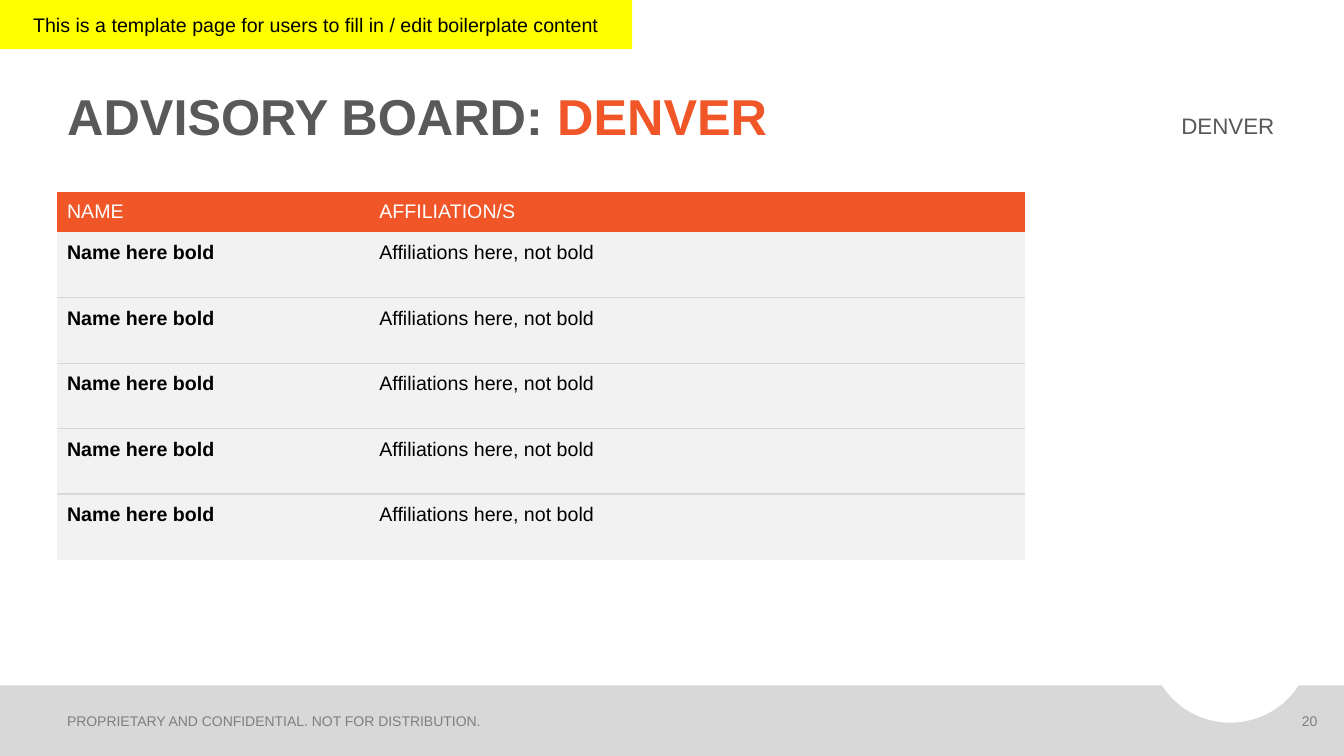
"""Build the Denver advisory board slide with its table of names and affiliations."""
from lxml import etree
from pptx import Presentation
from pptx.dml.color import RGBColor
from pptx.enum.shapes import MSO_SHAPE
from pptx.enum.text import MSO_ANCHOR, MSO_AUTO_SIZE, PP_ALIGN
from pptx.oxml import parse_xml
from pptx.oxml.ns import nsdecls, qn
from pptx.util import Cm, Pt

LEFT, CENTER, RIGHT = PP_ALIGN.LEFT, PP_ALIGN.CENTER, PP_ALIGN.RIGHT
TOP, MIDDLE, BOTTOM = MSO_ANCHOR.TOP, MSO_ANCHOR.MIDDLE, MSO_ANCHOR.BOTTOM
RECTANGLE, OVAL = MSO_SHAPE.RECTANGLE, MSO_SHAPE.OVAL
NO_AUTO_SIZE = MSO_AUTO_SIZE.NONE

COLORS = {
    "orange": "F15628", "dark": "595959", "gray": "7F7F7F", "band": "D8D8D8",
    "cell": "F2F2F2", "yellow": "FFFF00", "white": "FFFFFF", "black": "000000",
}
TITLE = [("ADVISORY BOARD: ", "dark"), ("DENVER", "orange")]
TITLE_BOX = (1.44, 0.76, 30.99, 3.05)
HEADER = ("NAME", "AFFILIATION/S")
MEMBERS = [("Name here bold", "Affiliations here, not bold")] * 5
BANNER = "This is a template page for users to fill in / edit boilerplate content"
BANNER_BOX = (0, 0, 15.93, 1.24)
LABELS = [
    ("PROPRIETARY AND CONFIDENTIAL. NOT FOR DISTRIBUTION.",
     (1.44, 17.8, 22.86, 0.71), LEFT, MIDDLE, {"size": Pt(10)}, "gray"),
    ("20", (32.03, 17.8, 1.42, 0.71), RIGHT, MIDDLE, {"size": Pt(10)}, "gray"),
    ("DENVER", (28.62, 2.7, 4.65, 0.81), CENTER, TOP, {"size": Pt(16)}, "dark"),
]
FOOTER_SHAPES = [
    (RECTANGLE, (0, 17.27, 33.87, 1.78), "band"),
    (OVAL, (28.96, 14.12, 4.09, 4.09), "white"),
]
TABLE_LEFT, TABLE_TOP = 1.44, 4.83
COLUMN_WIDTHS = (7.87, 16.51)
HEADER_HEIGHT, MEMBER_HEIGHT = 1.02, 1.65
PLAIN_TABLE_STYLE = "{2D5ABB26-0587-4C30-8999-92F81FD0307C}"


def set_values(target, values):
    for name, value in values.items():
        setattr(target, name, value)


def color(name):
    return RGBColor.from_string(COLORS[name])


def paint(fill, name):
    fill.solid()
    fill.fore_color.rgb = color(name)


def add_run(paragraph, text, color_name, values):
    run = paragraph.add_run()
    run.text = text
    set_values(run.font, {"name": "Arial", "bold": False, **values})
    run.font.color.rgb = color(color_name)


def add_shape(slide, kind, box, color_name):
    shape = slide.shapes.add_shape(kind, *map(Cm, box))
    shape.shadow.inherit = False
    paint(shape.fill, color_name)
    shape.line.fill.background()
    return shape


def add_title(slide):
    title = slide.shapes.title
    set_values(title, dict(zip(("left", "top", "width", "height"), map(Cm, TITLE_BOX))))
    set_values(title.text_frame, {"vertical_anchor": BOTTOM, "word_wrap": True,
                                  "auto_size": NO_AUTO_SIZE})
    paragraph = title.text_frame.paragraphs[0]
    set_values(paragraph, {"alignment": LEFT, "line_spacing": 0.9})
    for text, color_name in TITLE:
        add_run(paragraph, text, color_name, {"size": Pt(36), "bold": True})


def add_label(slide, text, box, alignment, anchor, values, color_name):
    frame = slide.shapes.add_textbox(*map(Cm, box)).text_frame
    set_values(frame, {"word_wrap": True, "vertical_anchor": anchor})
    frame.paragraphs[0].alignment = alignment
    add_run(frame.paragraphs[0], text, color_name, values)


def add_bottom_border(cell):
    border = parse_xml(f'<a:lnB {nsdecls("a")} w="12700"/>')
    fill = etree.SubElement(border, qn("a:solidFill"))
    etree.SubElement(fill, qn("a:srgbClr"), val=COLORS["band"])
    cell._tc.get_or_add_tcPr().insert(0, border)


def add_board_table(slide):
    rows = [HEADER, *MEMBERS]
    heights = [HEADER_HEIGHT] + [MEMBER_HEIGHT] * len(MEMBERS)
    box = (TABLE_LEFT, TABLE_TOP, sum(COLUMN_WIDTHS), sum(heights))
    frame = slide.shapes.add_table(len(rows), len(HEADER), *map(Cm, box))
    table = frame.table
    set_values(table, {"first_row": False, "horz_banding": False})
    table._tbl.tblPr.find(qn("a:tableStyleId")).text = PLAIN_TABLE_STYLE
    for column, width in zip(table.columns, COLUMN_WIDTHS):
        column.width = Cm(width)
    for row_index, (texts, height) in enumerate(zip(rows, heights)):
        is_header = row_index == 0
        table.rows[row_index].height = Cm(height)
        margin = Cm(0.13 if is_header else 0.25)
        for column_index, text in enumerate(texts):
            cell = table.cell(row_index, column_index)
            set_values(cell, {
                "margin_left": Cm(0.25), "margin_right": Cm(0.25),
                "margin_top": margin, "margin_bottom": margin,
                "vertical_anchor": MIDDLE if is_header else TOP,
            })
            paint(cell.fill, "orange" if is_header else "cell")
            is_bold = not is_header and column_index == 0
            add_run(cell.text_frame.paragraphs[0], text,
                    "white" if is_header else "black",
                    {"size": Pt(14), "bold": is_bold})
            if 0 < row_index < len(MEMBERS):
                add_bottom_border(cell)


def add_banner(slide):
    frame = add_shape(slide, RECTANGLE, BANNER_BOX, "yellow").text_frame
    set_values(frame, {"word_wrap": True, "vertical_anchor": MIDDLE})
    frame.paragraphs[0].alignment = CENTER
    add_run(frame.paragraphs[0], BANNER, "black", {"size": Pt(14)})


def main():
    presentation = Presentation()
    set_values(presentation, {"slide_width": Cm(33.87), "slide_height": Cm(19.05)})
    slide = presentation.slides.add_slide(presentation.slide_layouts[5])
    for footer_shape in FOOTER_SHAPES:
        add_shape(slide, *footer_shape)
    add_title(slide)
    add_board_table(slide)
    add_banner(slide)
    for label in LABELS:
        add_label(slide, *label)
    presentation.save("out.pptx")


if __name__ == "__main__":
    main()
